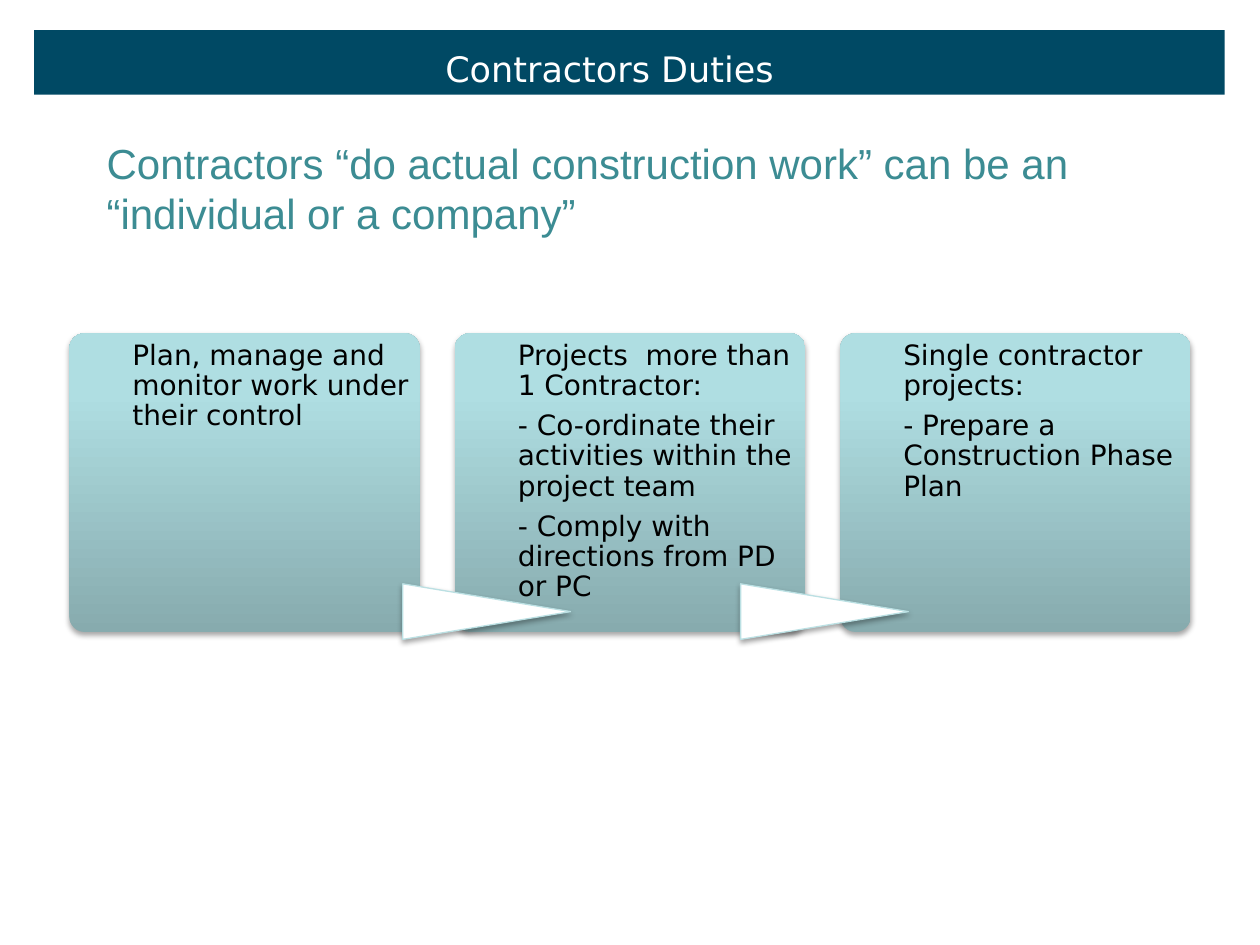
from lxml import etree
from pptx import Presentation
from pptx.dml.color import RGBColor
from pptx.enum.shapes import MSO_SHAPE
from pptx.enum.text import MSO_ANCHOR, MSO_AUTO_SIZE, PP_ALIGN
from pptx.oxml import parse_xml
from pptx.oxml.ns import qn
from pptx.util import Cm, Pt

RECTANGLE = MSO_SHAPE.RECTANGLE
ROUNDED = MSO_SHAPE.ROUNDED_RECTANGLE
TRIANGLE = MSO_SHAPE.FLOWCHART_EXTRACT
BOTTOM, TOP = MSO_ANCHOR.BOTTOM, MSO_ANCHOR.TOP
LEFT, CENTER = PP_ALIGN.LEFT, PP_ALIGN.CENTER
GROW, FIXED = MSO_AUTO_SIZE.SHAPE_TO_FIT_TEXT, MSO_AUTO_SIZE.NONE
NAMESPACE = "http://schemas.openxmlformats.org/drawingml/2006/main"

# Content
TITLE = "Contractors Duties"
SUBTITLE = "Contractors “do actual construction work” can be an “individual or a company”"
DUTIES = [
    ["Plan, manage and monitor work under their control"],
    ["Projects  more than 1 Contractor:",
     "- Co-ordinate their activities within the project team",
     "- Comply with directions from PD or PC"],
    ["Single contractor projects:",
     "- Prepare a Construction Phase Plan"],
]
GRADIENT = [(0, "87ABAE"), (80, "AFDEE2"), (100, "AFE0E4")]  # bottom to top

# Layout in centimetres: left, top, width, height as seen on the slide
BAR_BOX = (0.69, 0.61, 24, 1.3)
TITLE_BOX = (1.09, 0.38, 22.4, 1.55)
SUBTITLE_BOX = (1.9, 2.64, 20.8, 2.31)
CARD_BOX, CARD_STEP = (1.4, 6.72, 7.06, 6.02), 7.77
DUTY_BOX = (2.67, 6.73, 5.79, 1.19)
ARROW_BOX, ARROW_STEP = (8.12, 11.77, 3.38, 1.12), 6.81


def color(value):
    return RGBColor.from_string(value)


def shifted(box, distance):
    return (box[0] + distance, *box[1:])


def add_plain_shape(slide, kind, box):
    shape = slide.shapes.add_shape(kind, *map(Cm, box))
    shape.shadow.inherit = False
    shape.line.fill.background()
    return shape


def add_turned_shape(slide, kind, box):
    """Add a shape turned by 90 degrees that covers the given box, with a shadow."""
    left, top, width, height = box
    inset = (width - height) / 2
    shape = add_plain_shape(slide, kind, (left + inset, top - inset, height, width))
    shape.rotation = 90
    effects = shape._element.spPr.find(qn("a:effectLst"))
    shadow = etree.SubElement(effects, qn("a:outerShdw"), blurRad="40000",
                              dist="23000", dir="5400000", rotWithShape="0")
    shade = etree.SubElement(shadow, qn("a:srgbClr"), val="000000")
    etree.SubElement(shade, qn("a:alpha"), val="35000")
    return shape


def fill_gradient(shape, stops):
    shape.fill.gradient()
    gradient = shape._element.spPr.find(qn("a:gradFill"))
    marks = "".join(f'<a:gs pos="{position * 1000}"><a:srgbClr val="{value}"/></a:gs>'
                    for position, value in stops)
    gradient.getparent().replace(gradient, parse_xml(
        f'<a:gradFill xmlns:a="{NAMESPACE}" rotWithShape="0"><a:gsLst>{marks}</a:gsLst>'
        '<a:lin ang="16200000" scaled="0"/></a:gradFill>'))


def add_text(slide, box, lines, font, size, text_color, align=LEFT, anchor=TOP,
             spacing=1.0, after=0, insets=(0.25, 0.13, 0.25, 0.13), auto_size=GROW):
    frame = slide.shapes.add_textbox(*map(Cm, box)).text_frame
    frame.word_wrap = True
    frame.auto_size = auto_size
    frame.vertical_anchor = anchor
    (frame.margin_left, frame.margin_top,
     frame.margin_right, frame.margin_bottom) = map(Cm, insets)
    frame.text = "\n".join(lines)
    for paragraph in frame.paragraphs:
        paragraph.alignment = align
        paragraph.line_spacing = spacing
        paragraph.space_after = Pt(after)
        for run in paragraph.runs:
            run.font.name = font
            run.font.size = Pt(size)
            run.font.color.rgb = color(text_color)


def main():
    presentation = Presentation()
    presentation.slide_width, presentation.slide_height = Cm(25.4), Cm(19.05)
    slide = presentation.slides.add_slide(presentation.slide_layouts[6])

    # Title bar
    bar = add_plain_shape(slide, RECTANGLE, BAR_BOX)
    bar.fill.solid()
    bar.fill.fore_color.rgb = color("004964")
    add_text(slide, TITLE_BOX, [TITLE], "DejaVu Sans", 20, "FFFFFF",
             align=CENTER, anchor=BOTTOM, spacing=0.75)

    # Duty cards
    for index, lines in enumerate(DUTIES):
        distance = index * CARD_STEP
        card = add_turned_shape(slide, ROUNDED, shifted(CARD_BOX, distance))
        card.adjustments[0] = 0.05
        fill_gradient(card, GRADIENT)
        add_text(slide, shifted(DUTY_BOX, distance), lines, "DejaVu Sans", 16, "000000",
                 spacing=0.9, after=5.6, insets=(0, 0.15, 0.2, 0), auto_size=FIXED)

    # Arrowheads between the cards
    for index in range(len(DUTIES) - 1):
        arrow = add_turned_shape(slide, TRIANGLE, shifted(ARROW_BOX, index * ARROW_STEP))
        arrow.fill.solid()
        arrow.fill.fore_color.rgb = color("FFFFFF")
        arrow.line.color.rgb = color("BBE0E3")
        arrow.line.width = Pt(0.75)

    # Subtitle
    add_text(slide, SUBTITLE_BOX, [SUBTITLE], "Arial", 24, "3C8C93")

    presentation.save("out.pptx")


if __name__ == "__main__":
    main()
